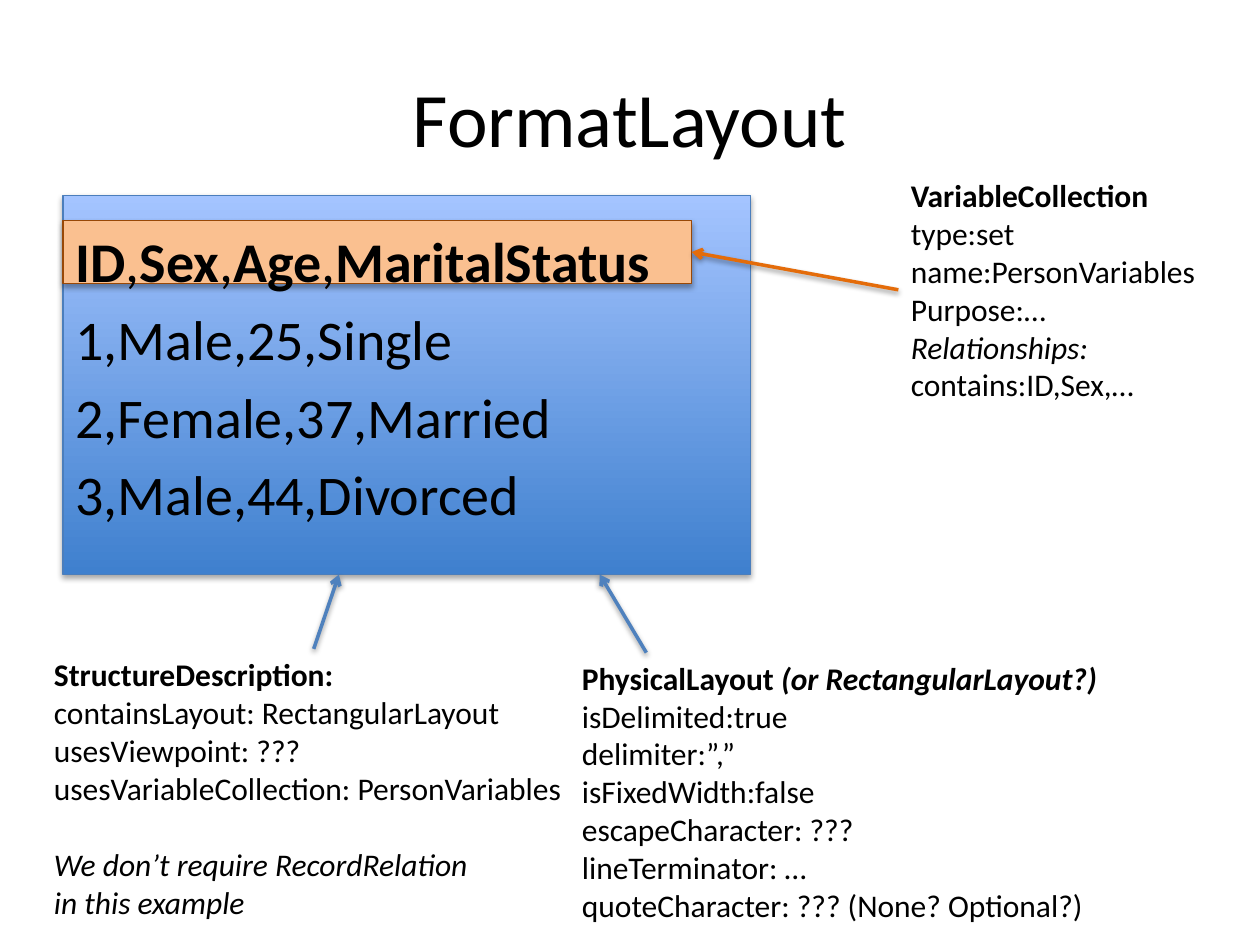
from dataclasses import dataclass

from lxml import etree
from pptx import Presentation
from pptx import util as u
from pptx.dml.color import RGBColor
from pptx.enum import shapes, text
from pptx.oxml import ns


@dataclass(frozen=True)
class Theme:
    font: str = "Calibri"
    title: int = 44
    body: int = 32
    note: int = 18
    ink: str = "000000"
    blue: str = "4F81BD"
    panel_low: str = "3F80CE"
    panel_high: str = "A4C4FF"
    panel_line: str = "4B7EBC"
    orange: str = "E46C0A"
    header: str = "FAC090"
    header_line: str = "984807"


THEME = Theme()


def rgb(value):
    return RGBColor.from_string(value)


def place(*lengths):
    return [u.Inches(n) for n in lengths]


def add_shadow(s, alpha, dist):
    effects = etree.SubElement(s._element.spPr, ns.qn("a:effectLst"))
    shadow = etree.SubElement(
        effects, ns.qn("a:outerShdw"), blurRad=str(u.Pt(3.1)),
        dist=str(u.Pt(dist)), dir="5400000", rotWithShape="0")
    color = etree.SubElement(shadow, ns.qn("a:srgbClr"), val=THEME.ink)
    etree.SubElement(color, ns.qn("a:alpha"), val=str(alpha * 1000))


def add_box(slide, box, line, fill=None, gradient=None):
    s = slide.shapes.add_shape(shapes.MSO_SHAPE.RECTANGLE, *place(*box))
    if gradient:
        s.fill.gradient()
        s.fill.gradient_angle = 90
        for stop, color in zip(s.fill.gradient_stops, gradient):
            stop.color.rgb = rgb(color)
    else:
        s.fill.solid()
        s.fill.fore_color.rgb = rgb(fill)
    s.line.color.rgb = rgb(line)
    s.line.width = u.Pt(0.75)
    add_shadow(s, 35, 1.8)


def add_arrow(slide, start, end, color):
    s = slide.shapes.add_connector(
        shapes.MSO_CONNECTOR.STRAIGHT, *place(*start, *end))
    s.line.color.rgb = rgb(color)
    s.line.width = u.Pt(2)
    etree.SubElement(s.line._ln, ns.qn("a:tailEnd"), type="arrow")
    add_shadow(s, 38, 1.6)


def add_text(slide, box, paragraphs, size, align=text.PP_ALIGN.LEFT,
             anchor=text.MSO_ANCHOR.TOP, wrap=True, before=0, gaps=None):
    """Each paragraph is a string or a list of (string, style) runs."""
    tf = slide.shapes.add_textbox(*place(*box)).text_frame
    tf.word_wrap = wrap
    tf.vertical_anchor = anchor
    if not wrap:
        tf.auto_size = text.MSO_AUTO_SIZE.SHAPE_TO_FIT_TEXT
    for i, runs in enumerate(paragraphs):
        p = tf.add_paragraph() if i else tf.paragraphs[0]
        p.alignment = align
        p.space_before = u.Pt((gaps or {}).get(i, before))
        for content, style in [(runs, "")] if isinstance(runs, str) else runs:
            r = p.add_run()
            r.text = content
            r.font.name = THEME.font
            r.font.size = u.Pt(size)
            r.font.color.rgb = rgb(THEME.ink)
            r.font.bold = "b" in style
            r.font.italic = "i" in style


def add_note(slide, box, paragraphs, arrow, color, gaps=None):
    add_text(slide, box, paragraphs, THEME.note, wrap=False, gaps=gaps)
    add_arrow(slide, *arrow, color)


def main():
    prs = Presentation()
    prs.slide_width, prs.slide_height = place(10, 7.5)
    slide = prs.slides.add_slide(prs.slide_layouts[6])

    add_box(slide, (0.5, 1.55, 5.46, 3.01), THEME.panel_line,
            gradient=(THEME.panel_low, THEME.panel_high))
    add_note(slide, (4.52, 5.18, 4.4, 2.22), [
        [("PhysicalLayout ", "b"), ("(or RectangularLayout?)", "bi")],
        "isDelimited:true",
        "delimiter:”,”",
        "isFixedWidth:false",
        "escapeCharacter: ???",
        "lineTerminator: …",
        "quoteCharacter: ??? (None? Optional?)",
    ], ((5.13, 5.18), (4.76, 4.56)), THEME.blue)
    add_text(slide, (0.5, 0.3, 9, 1.25), ["FormatLayout"], THEME.title,
             align=text.PP_ALIGN.CENTER, anchor=text.MSO_ANCHOR.MIDDLE)
    add_box(slide, (0.5, 1.75, 4.99, 0.5), THEME.header_line,
            fill=THEME.header)
    add_text(slide, (0.5, 1.75, 9, 4.95), [
        [("ID", "b"), (",", ""), ("Sex", "b"), (",", ""),
         ("Age", "b"), (",", ""), ("MaritalStatus", "b")],
        "1,Male,25,Single",
        "2,Female,37,Married",
        "3,Male,44,Divorced",
    ], THEME.body, before=6)
    add_note(slide, (7.13, 1.35, 2.52, 1.92), [
        [("VariableCollection", "b")],
        "type:set",
        "name:PersonVariables",
        "Purpose:…",
        [("Relationships:", "i")],
        "contains:ID,Sex,…",
    ], ((7.13, 2.3), (5.49, 2)), THEME.orange)
    add_note(slide, (0.33, 5.15, 4.33, 2.22), [
        [("StructureDescription:", "b")],
        "containsLayout: RectangularLayout",
        "usesViewpoint: ???",
        "usesVariableCollection: PersonVariables",
        [("We don’t require RecordRelation", "i")],
        [("in this example", "i")],
    ], ((2.49, 5.15), (2.69, 4.56)), THEME.blue, gaps={4: 22})

    prs.save("out.pptx")


if __name__ == "__main__":
    main()
